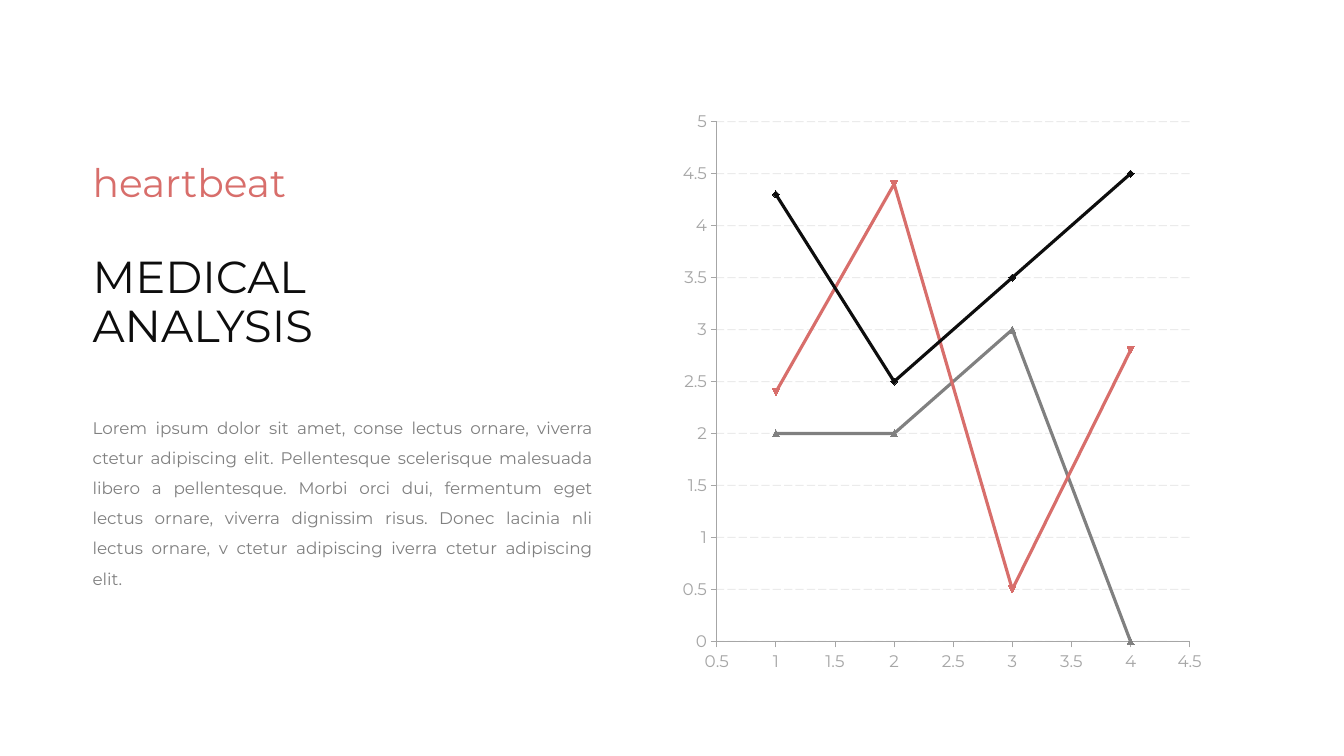
from lxml import etree
from pptx import Presentation
from pptx import util as u
from pptx.chart.data import XyChartData
from pptx.dml.color import RGBColor
from pptx.enum import chart as ch, dml, text
from pptx.oxml import parse_xml
from pptx.oxml.ns import nsdecls, qn

BLACK = RGBColor(0x0D, 0x0D, 0x0D)
RED = RGBColor(0xD8, 0x6E, 0x6B)
GREY = RGBColor(0x80, 0x80, 0x80)
AXIS = RGBColor(0xA6, 0xA6, 0xA6)
GRID = RGBColor(0xBF, 0xBF, 0xBF)
FONT = "Montserrat"
WIDTH, HEIGHT = u.Inches(13.33), u.Inches(7.5)
MARGIN = u.Inches(0.82)

BODY = ("Lorem ipsum dolor sit amet, conse lectus ornare, viverra ctetur adipiscing elit. "
        "Pellentesque scelerisque malesuada libero a pellentesque. Morbi orci dui, fermentum "
        "eget lectus ornare, viverra dignissim risus. Donec lacinia nli lectus ornare, v ctetur "
        "adipiscing iverra ctetur adipiscing elit.")
SERIES = [
    ("Series 1", (4.3, 2.5, 3.5, 4.5), BLACK),
    ("Series 2", (2.4, 4.4, 0.5, 2.8), RED),
    ("Series 3", (2, 2, 3, 0), GREY),
]


def add_text(slide, top, width, height, lines, size, color, spacing=1.0, align=None):
    """Text box on the left margin, one paragraph per line."""
    sp = slide.shapes.add_textbox(MARGIN, u.Inches(top), u.Inches(width), u.Inches(height))
    tf = sp.text_frame
    tf.word_wrap = True
    for i, line in enumerate(lines):
        p = tf.paragraphs[0] if i == 0 else tf.add_paragraph()
        p.line_spacing = spacing
        p.alignment = align
        r = p.add_run()
        r.text = line
        r.font.name, r.font.size = FONT, u.Pt(size)
        r.font.color.rgb = color


def style_axis(axis, low, high):
    axis.minimum_scale, axis.maximum_scale, axis.major_unit = low, high, 0.5
    axis.major_tick_mark = ch.XL_TICK_MARK.OUTSIDE
    axis.minor_tick_mark = ch.XL_TICK_MARK.NONE
    axis.format.line.color.rgb = AXIS
    axis.format.line.width = u.Pt(0.75)
    labels = axis.tick_labels
    labels.number_format, labels.number_format_is_linked = "General", False
    labels.font.name, labels.font.size = FONT, u.Pt(12)
    labels.font.color.rgb = AXIS


def style_grid(axis):
    line = axis.major_gridlines.format.line
    line.color.rgb = GRID
    line.width = u.Pt(0.75)
    line.dash_style = dml.MSO_LINE.LONG_DASH
    # Gridlines at 30 % opacity
    color = axis.major_gridlines._xAx.find(qn("c:majorGridlines")).find(".//" + qn("a:srgbClr"))
    etree.SubElement(color, qn("a:alpha")).set("val", "30000")


def place_plot(chart, x, y, w, h):
    """Fix the inner plot area, as shares of the chart."""
    area = chart._chartSpace.chart.plotArea
    for old in area.findall(qn("c:layout")):
        area.remove(old)
    sizes = "".join(f'<c:{k} val="{v}"/>' for k, v in zip("xywh", (x, y, w, h)))
    area.insert(0, parse_xml(
        f'<c:layout {nsdecls("c")}><c:manualLayout><c:layoutTarget val="inner"/>'
        f'<c:xMode val="edge"/><c:yMode val="edge"/>{sizes}</c:manualLayout></c:layout>'))


def add_curves(slide):
    data = XyChartData()
    for name, values, _ in SERIES:
        series = data.add_series(name)
        for x, y in enumerate(values, 1):
            series.add_data_point(x, y)
    chart = slide.shapes.add_chart(
        ch.XL_CHART_TYPE.XY_SCATTER_SMOOTH, WIDTH // 2, u.Inches(1),
        u.Inches(5.36), u.Inches(5.78), data).chart
    chart.has_legend = chart.has_title = False
    chart.font.name, chart.font.size = "Lato", u.Pt(12)
    chart.font.color.rgb = AXIS
    chart.plots[0].vary_by_categories = False

    # Axes and grid
    style_axis(chart.category_axis, 0.5, 4.5)
    style_axis(chart.value_axis, 0, 5)
    chart.category_axis.has_major_gridlines = False
    chart.value_axis.has_major_gridlines = True
    style_grid(chart.value_axis)
    place_plot(chart, 0.083, 0.036, 0.875, 0.892)

    # Curves
    for series, (_, _, color) in zip(chart.plots[0].series, SERIES):
        series.smooth = True
        series.format.line.color.rgb = color
        series.format.line.width = u.Pt(2.25)
        marker = series.marker
        marker.style, marker.size = ch.XL_MARKER_STYLE.AUTOMATIC, 5
        marker.format.fill.solid()
        marker.format.fill.fore_color.rgb = color
        marker.format.line.color.rgb = color


def main():
    prs = Presentation()
    prs.slide_width, prs.slide_height = WIDTH, HEIGHT
    slide = prs.slides.add_slide(prs.slide_layouts[6])

    # Heading, label and body
    add_text(slide, 2.48, 4.54, 1.13, ["MEDICAL", "ANALYSIS"], 32, BLACK, 0.9)
    add_text(slide, 1.52, 2.66, 0.57, ["heartbeat"], 28, RED)
    add_text(slide, 3.99, 5.16, 1.58, [BODY], 12, GREY, 1.5, text.PP_ALIGN.JUSTIFY)

    add_curves(slide)
    prs.save("out.pptx")


if __name__ == "__main__":
    main()
